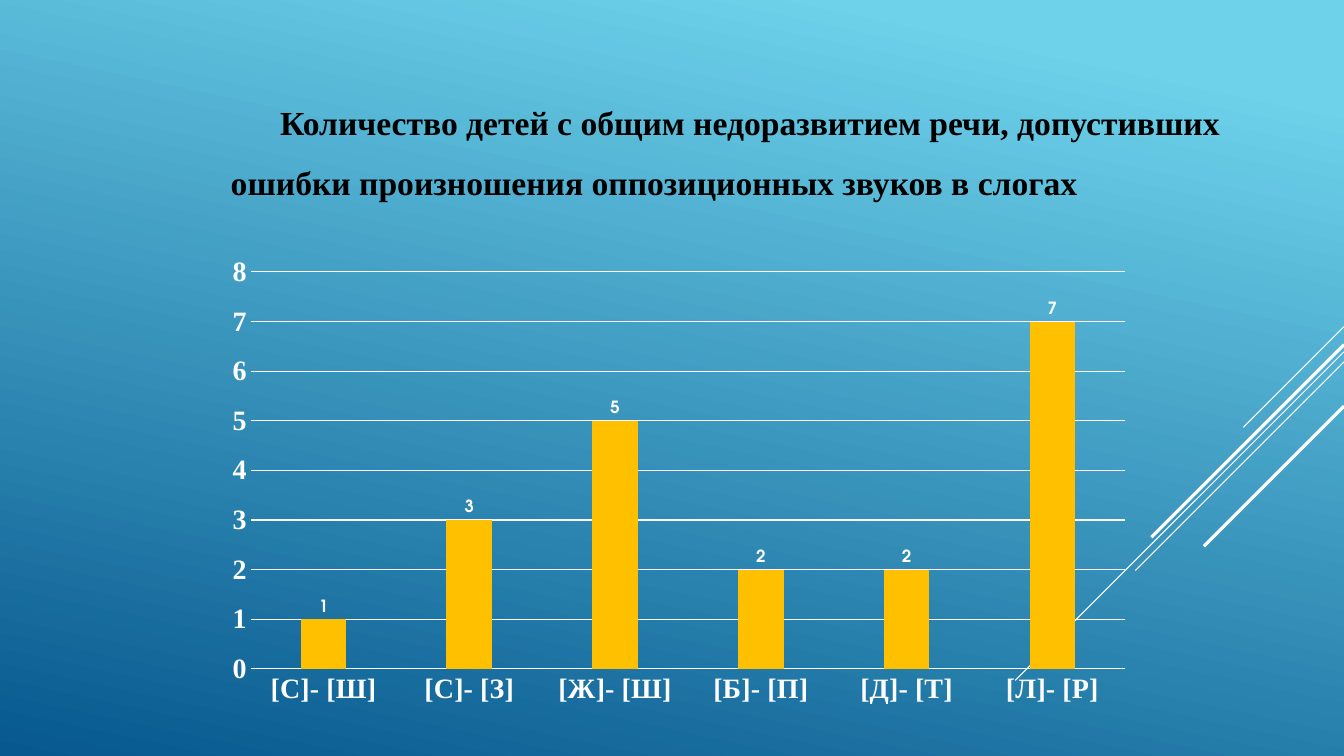
"""Build a slide charting children's pronunciation errors by sound pair."""
from dataclasses import dataclass

from lxml import etree
from pptx import Presentation
from pptx.chart.data import CategoryChartData
from pptx.dml.color import RGBColor
from pptx.enum.chart import XL_CHART_TYPE, XL_LABEL_POSITION, XL_TICK_MARK
from pptx.enum.shapes import MSO_CONNECTOR
from pptx.enum.text import MSO_AUTO_SIZE
from pptx.oxml.ns import qn
from pptx.util import Inches, Pt

COLUMNS = XL_CHART_TYPE.COLUMN_CLUSTERED
OUTSIDE_END = XL_LABEL_POSITION.OUTSIDE_END
NO_TICK = XL_TICK_MARK.NONE
STRAIGHT = MSO_CONNECTOR.STRAIGHT
GROW = MSO_AUTO_SIZE.SHAPE_TO_FIT_TEXT

COLORS = {"sky": "6ED2EB", "deep": "06588E", "white": "FFFFFF",
          "black": "000000", "bar": "FFC000"}
SERIF = "Times New Roman"
SANS = "TeX Gyre Adventor"
SLIDE_WIDTH, SLIDE_HEIGHT = 13.33, 7.5

HEADING = ("Количество детей с общим недоразвитием речи, допустивших "
           "ошибки произношения оппозиционных звуков в слогах")
ERRORS = {"[С]- [Ш]": 1, "[С]- [З]": 3, "[Ж]- [Ш]": 5,
          "[Б]- [П]": 2, "[Д]- [Т]": 2, "[Л]- [Р]": 7}
PLOT_AREA = {"x": 0.043, "y": 0.075, "w": 0.917, "h": 0.824}


@dataclass(frozen=True)
class Ray:
    """A diagonal from the right slide edge, falling as far as it runs left."""
    top: float
    run: float
    weight: float


RAYS = [Ray(3.24, 1.0, 0.75), Ray(3.49, 3.26, 0.75), Ray(3.59, 2.07, 0.75),
        Ray(3.42, 1.91, 2.25), Ray(4.03, 1.39, 2.25)]


def color(name: str) -> RGBColor:
    """Look up a palette colour."""
    return RGBColor.from_string(COLORS[name])


def style_font(font, size: float, face: str, tint: str, bold: bool) -> None:
    """Apply a face, size, colour and weight to a font."""
    font.size, font.name, font.bold = Pt(size), face, bold
    font.color.rgb = color(tint)


def style_line(line, weight: float) -> None:
    """Make a line white with the given weight."""
    line.color.rgb = color("white")
    line.width = Pt(weight)


def paint_background(slide) -> None:
    """Fill the slide with the blue gradient."""
    fill = slide.background.fill
    fill.gradient()
    fill.gradient_angle = 258
    for stop, (tint, position) in zip(fill.gradient_stops, [("sky", 0.1), ("deep", 1.0)]):
        stop.color.rgb = color(tint)
        stop.position = position


def add_ray(slide, ray: Ray) -> None:
    """Draw one decorative diagonal."""
    diagonal = slide.shapes.add_connector(
        STRAIGHT, Inches(SLIDE_WIDTH), Inches(ray.top),
        Inches(SLIDE_WIDTH - ray.run), Inches(ray.top + ray.run))
    style_line(diagonal.line, ray.weight)
    etree.SubElement(diagonal.element.spPr, qn("a:effectLst"))


def place_plot(chart) -> None:
    """Fix the inner plot area as fractions of the chart."""
    plot_area = chart.element.find(qn("c:chart")).find(qn("c:plotArea"))
    for previous in plot_area.findall(qn("c:layout")):
        plot_area.remove(previous)
    layout = etree.Element(qn("c:layout"))
    plot_area.insert(0, layout)
    manual = etree.SubElement(layout, qn("c:manualLayout"))
    settings = {"layoutTarget": "inner", "xMode": "edge", "yMode": "edge", **PLOT_AREA}
    for tag, value in settings.items():
        etree.SubElement(manual, qn(f"c:{tag}")).set("val", str(value))


def add_error_chart(slide) -> None:
    """Add the column chart of errors by sound pair."""
    data = CategoryChartData(number_format="General")
    data.categories = list(ERRORS)
    data.add_series("Series 1", list(ERRORS.values()))
    chart = slide.shapes.add_chart(COLUMNS, Inches(2.08), Inches(2.34),
                                   Inches(9.46), Inches(4.78), data).chart
    chart.has_legend = chart.has_title = False
    style_font(chart.font, 10, SANS, "white", False)
    place_plot(chart)

    sounds, counts = chart.category_axis, chart.value_axis
    for axis in (sounds, counts):
        axis.major_tick_mark = axis.minor_tick_mark = NO_TICK
        style_font(axis.tick_labels.font, 20, SERIF, "white", True)
    style_line(sounds.format.line, 0.75)
    counts.format.line.fill.background()
    counts.minimum_scale, counts.maximum_scale, counts.major_unit = 0, 8, 1
    style_line(counts.major_gridlines.format.line, 0.75)

    columns = chart.plots[0]
    columns.vary_by_categories = False
    columns.gap_width, columns.overlap = 219, -17
    children = columns.series[0]
    children.format.fill.solid()
    children.format.fill.fore_color.rgb = color("bar")
    labels = children.data_labels
    labels.show_value = True
    labels.position = OUTSIDE_END
    style_font(labels.font, 12, SANS, "white", True)


def add_text(slide, text: str, *, left: float, top: float, width: float, height: float,
             size: float, face: str, tint: str, bold: bool, margin: float,
             indent: float, spacing: float, after: float) -> None:
    """Add a wrapped paragraph with an indented first line."""
    box = slide.shapes.add_textbox(Inches(left), Inches(top), Inches(width), Inches(height))
    frame = box.text_frame
    frame.word_wrap = True
    frame.auto_size = GROW
    paragraph = frame.paragraphs[0]
    paragraph.line_spacing = spacing
    paragraph.space_after = Pt(after)
    properties = paragraph._p.get_or_add_pPr()
    properties.set("marL", str(Inches(margin)))
    properties.set("indent", str(Inches(indent)))
    run = paragraph.add_run()
    run.text = text
    style_font(run.font, size, face, tint, bold)


def main() -> None:
    """Assemble and save the slide."""
    deck = Presentation()
    deck.slide_width, deck.slide_height = Inches(SLIDE_WIDTH), Inches(SLIDE_HEIGHT)
    slide = deck.slides.add_slide(deck.slide_layouts[6])
    paint_background(slide)
    for ray in RAYS:
        add_ray(slide, ray)
    add_error_chart(slide)
    add_text(slide, HEADING, left=1.99, top=0.76, width=10.38, height=1.25,
             size=24, face=SERIF, tint="black", bold=True,
             margin=0.2, indent=0.49, spacing=1.5, after=8)
    deck.save("out.pptx")


if __name__ == "__main__":
    main()
